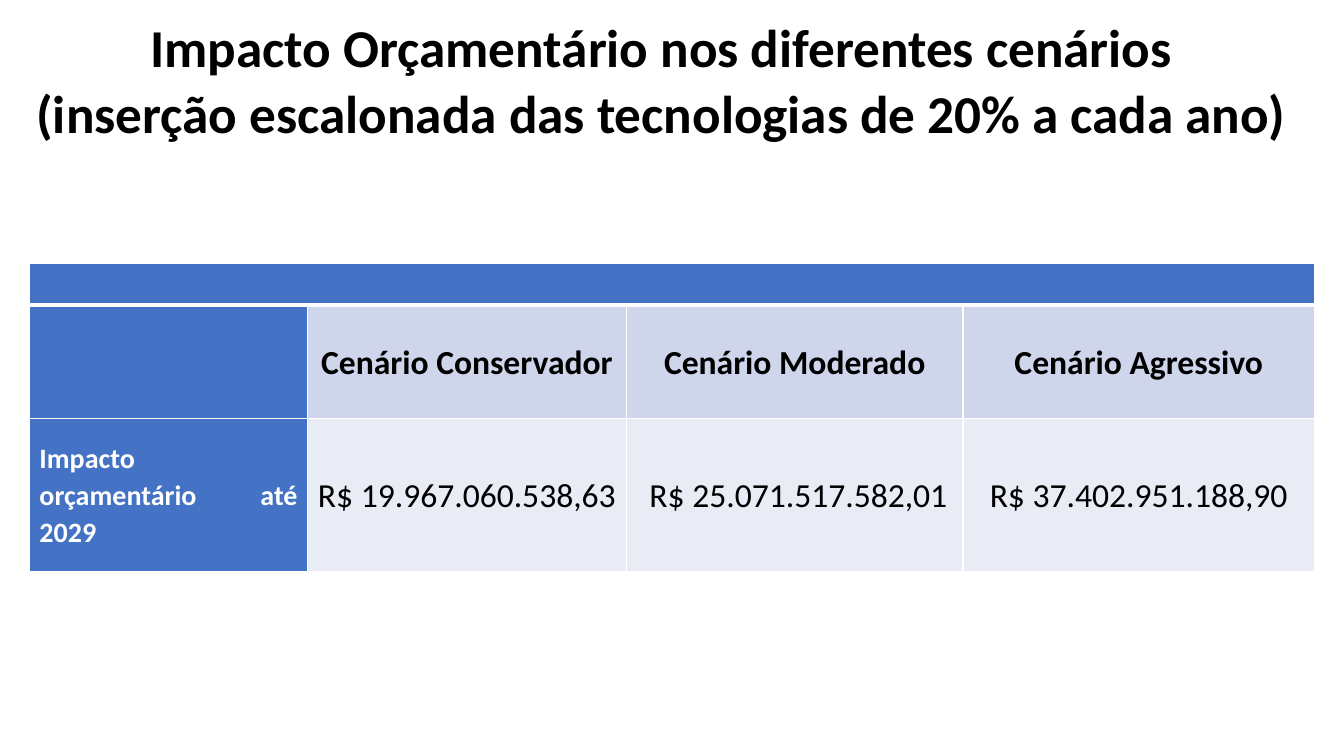
from pptx import Presentation
from pptx.dml.color import RGBColor
from pptx.enum import text
from pptx.oxml import parse_xml
from pptx.oxml.ns import nsdecls
from pptx.util import Pt

BLUE, PALE, PALER = "4472C4", "CFD5EA", "E9EBF5"
BLACK, WHITE = "000000", "FFFFFF"
CENTER, JUSTIFY = text.PP_ALIGN.CENTER, text.PP_ALIGN.JUSTIFY


def color(value):
    return RGBColor.from_string(value)


def write(paragraph, words, size, ink=BLACK, bold=False, align=CENTER,
          spacing=1.07, after=8):
    paragraph.alignment = align
    paragraph.line_spacing = spacing
    paragraph.space_after = Pt(after)
    run = paragraph.add_run()
    run.text = words
    run.font.name = "Calibri"
    run.font.size = Pt(size)
    run.font.bold = bold
    run.font.color.rgb = color(ink)


def style_cell(cell, fill, bottom=1):
    cell.margin_left = cell.margin_right = Pt(7.2)
    cell.margin_top = cell.margin_bottom = 0
    cell.vertical_anchor = text.MSO_ANCHOR.MIDDLE
    # Borders come before the fill in the cell properties
    properties = cell._tc.get_or_add_tcPr()
    for side, width in (("L", 1), ("R", 1), ("T", 1), ("B", bottom)):
        properties.append(parse_xml(
            f'<a:ln{side} {nsdecls("a")} w="{Pt(width)}"><a:solidFill>'
            f'<a:srgbClr val="{WHITE}"/></a:solidFill></a:ln{side}>'))
    cell.fill.solid()
    cell.fill.fore_color.rgb = color(fill)


def add_title(slide, left, top, width, height):
    frame = slide.shapes.add_textbox(
        Pt(left), Pt(top), Pt(width), Pt(height)).text_frame
    frame.word_wrap = True
    frame.vertical_anchor = text.MSO_ANCHOR.MIDDLE
    lines = ("Impacto Orçamentário nos diferentes cenários",
             "(inserção escalonada das tecnologias de 20% a cada ano)")
    for i, line in enumerate(lines):
        paragraph = frame.add_paragraph() if i else frame.paragraphs[0]
        write(paragraph, line, 38, bold=True, spacing=0.9, after=6)


def add_impact_table(slide, left, top, width, height):
    scenarios = (("Cenário Conservador", "R$ 19.967.060.538,63"),
                 ("Cenário Moderado", " R$ 25.071.517.582,01"),
                 ("Cenário Agressivo", "R$ 37.402.951.188,90"))
    table = slide.shapes.add_table(
        3, 4, Pt(left), Pt(top), Pt(width), Pt(height)).table
    for column, share in zip(table.columns, (0.2165, 0.248, 0.262, 0.2735)):
        column.width = Pt(round(width * share, 2))
    band, header = 30, 81
    for row, size in zip(table.rows, (band, header, height - band - header)):
        row.height = Pt(size)

    # Top band across all columns
    for cell in table.rows[0].cells:
        style_cell(cell, BLUE, bottom=3)
    table.cell(0, 0).merge(table.cell(0, 3))

    # Row labels
    for row in (1, 2):
        style_cell(table.cell(row, 0), BLUE)
    write(table.cell(2, 0).text_frame.paragraphs[0],
          "Impacto orçamentário até 2029", 20, WHITE, True, JUSTIFY)

    # Scenario names and amounts
    for column, (scenario, amount) in enumerate(scenarios, 1):
        name, value = table.cell(1, column), table.cell(2, column)
        style_cell(name, PALE)
        style_cell(value, PALER)
        write(name.text_frame.paragraphs[0], scenario, 24, bold=True)
        write(value.text_frame.paragraphs[0], amount, 24)


def main():
    deck = Presentation()
    deck.slide_width, deck.slide_height = Pt(960), Pt(540)
    slide = deck.slides.add_slide(deck.slide_layouts[6])
    add_title(slide, 0, 0, 945, 119)
    add_impact_table(slide, 21, 188, 918, 220)
    deck.save("out.pptx")


if __name__ == "__main__":
    main()
